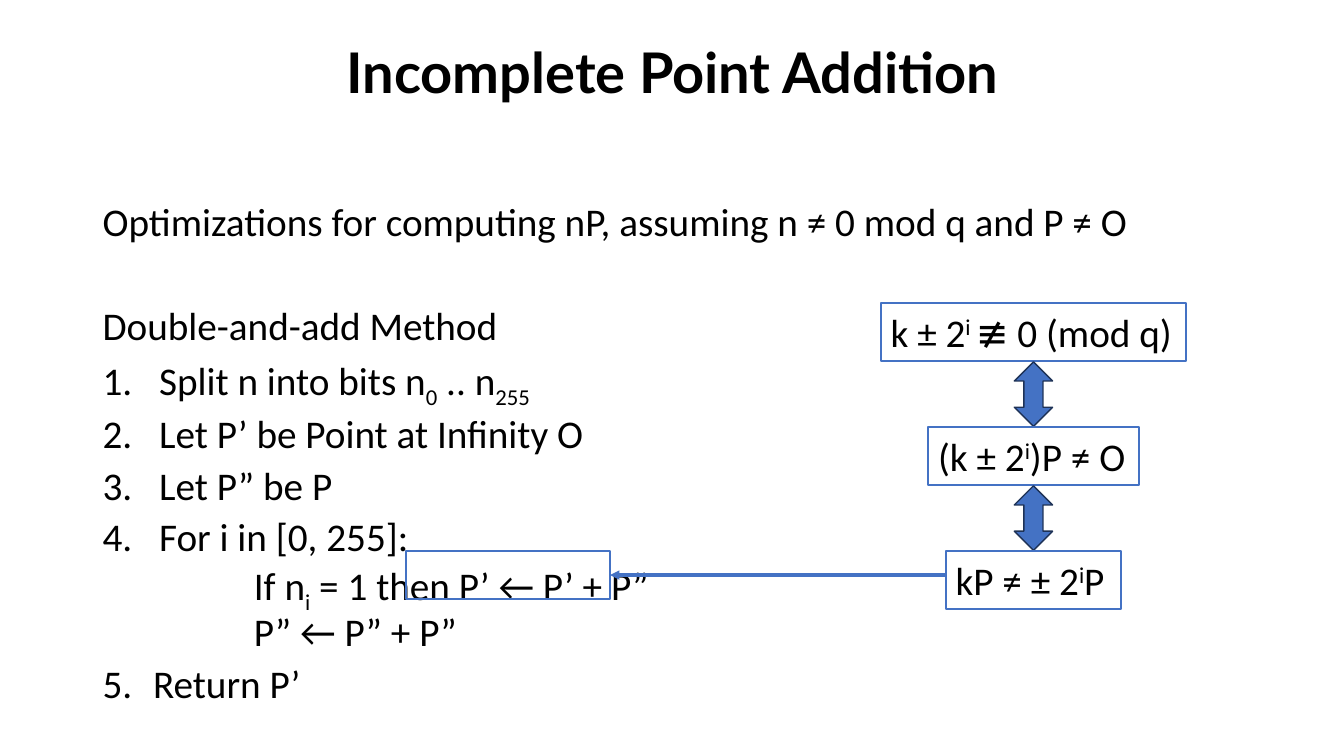
from lxml import etree
from pptx import Presentation
from pptx.dml.color import RGBColor
from pptx.enum import shapes, text
from pptx.oxml.ns import qn
from pptx.util import Inches, Pt

BLACK, WHITE, BLUE, NAVY = "000000", "FFFFFF", "4472C4", "1E3256"
SUB, SUP = -25000, 30000

TITLE = [("Incomplete Point Addition", 0)]
PLAIN = dict(margin=0, indent=0, before=10, number=None)
STEP = dict(margin=0.56, indent=-0.56, before=10, number=1)
NESTED = dict(margin=1.5, indent=0, before=5, number=None)
BODY = [
    ([("Optimizations for computing nP, assuming n ≠ 0 mod q and P ≠ O", 0)], {**PLAIN, "before": 0}),
    ([("Double-and-add Method", 0)], {**PLAIN, "before": 47}),
    ([("Split n into bits n", 0), ("0", SUB), (" .. n", 0), ("255", SUB)], STEP),
    ([("Let P’ be Point at Infinity O", 0)], STEP),
    ([("Let P” be P", 0)], STEP),
    ([("For i in [0, 255]:", 0)], STEP),
    ([("If n", 0), ("i", SUB), (" = 1 then P’ ← P’ + P”", 0)], NESTED),
    ([("P” ← P” + P”", 0)], NESTED),
    ([("Return P’", 0)], {**STEP, "margin": 0.5, "indent": -0.5, "number": 5}),
]
CONDITIONS = [
    (3.03, [("k ± 2", 0), ("i ", SUP), ("≢ 0 (mod q)", 0)]),
    (2.09, [("(k ± 2", 0), ("i", SUP), (")P ≠ O", 0)]),
    (1.74, [("kP ≠ ± 2", 0), ("i", SUP), ("P", 0)]),
]
CHAIN_X, CHAIN_TOP, PITCH, BOX_H = 10.25, 3.01, 1.23, 0.57
ARROW_W, ARROW_H = 0.38, 0.64
HIGHLIGHT = (4.03, 5.47, 2.02, 0.47)


def color(value):
    return RGBColor.from_string(value)


def write(p, runs, font="Calibri", size=28, bold=False):
    for words, base in runs:
        r = p.add_run()
        r.text = words
        for key, value in dict(name=font, size=Pt(size), bold=bold).items():
            setattr(r.font, key, value)
        r.font.color.rgb = color(BLACK)
        if base:
            r.font._element.set("baseline", str(base))


def add_text(slide, box, anchor):
    tf = slide.shapes.add_textbox(*map(Inches, box)).text_frame
    for key, value in dict(word_wrap=True, vertical_anchor=anchor).items():
        setattr(tf, key, value)
    return tf


def add_shape(slide, kind, box, fill, line, width):
    sp = slide.shapes.add_shape(kind, *map(Inches, box))
    sp.shadow.inherit = False
    if fill:
        sp.fill.solid()
        sp.fill.fore_color.rgb = color(fill)
    else:
        sp.fill.background()
    sp.line.color.rgb = color(line)
    sp.line.width = Pt(width)
    return sp


def add_body(slide):
    tf = add_text(slide, (0.92, 2, 11.5, 5.41), text.MSO_ANCHOR.TOP)
    for i, (runs, style) in enumerate(BODY):
        p = tf.add_paragraph() if i else tf.paragraphs[0]
        p.line_spacing = 0.8
        p.space_before = Pt(style["before"])
        pPr = p._p.get_or_add_pPr()
        pPr.set("marL", str(Inches(style["margin"])))
        pPr.set("indent", str(Inches(style["indent"])))
        if style["number"]:
            bullet = etree.SubElement(pPr, qn("a:buAutoNum"), type="arabicPeriod")
            if style["number"] > 1:
                bullet.set("startAt", str(style["number"]))
        write(p, runs)


def add_chain(slide):
    for i, (width, runs) in enumerate(CONDITIONS):
        top = CHAIN_TOP + i * PITCH
        sp = add_shape(slide, shapes.MSO_SHAPE.RECTANGLE,
                       (CHAIN_X - width / 2, top, width, BOX_H), WHITE, BLUE, 1.5)
        tf = sp.text_frame
        for key, value in dict(word_wrap=False, vertical_anchor=text.MSO_ANCHOR.TOP).items():
            setattr(tf, key, value)
        p = tf.paragraphs[0]
        p.alignment = text.PP_ALIGN.LEFT
        write(p, runs)
        if i < len(CONDITIONS) - 1:
            add_shape(slide, shapes.MSO_SHAPE.UP_DOWN_ARROW,
                      (CHAIN_X - ARROW_W / 2, top + BOX_H + 0.01, ARROW_W, ARROW_H), BLUE, NAVY, 1)


def add_pointer(slide):
    target = add_shape(slide, shapes.MSO_SHAPE.RECTANGLE, HIGHLIGHT, None, BLUE, 1.5)
    left, top, width, height = HIGHLIGHT
    y = top + height / 2
    start = CHAIN_X - CONDITIONS[-1][0] / 2
    line = slide.shapes.add_connector(shapes.MSO_CONNECTOR.STRAIGHT,
                                      *map(Inches, (start, y, left + width, y)))
    line.end_connect(target, 3)
    line.line.color.rgb = color(BLUE)
    line.line.width = Pt(2.25)
    etree.SubElement(line.line._get_or_add_ln(), qn("a:tailEnd"), type="triangle")
    etree.SubElement(line._element.spPr, qn("a:effectLst"))


def main():
    prs = Presentation()
    prs.slide_width, prs.slide_height = Inches(13.33), Inches(7.5)
    slide = prs.slides.add_slide(prs.slide_layouts[6])
    p = add_text(slide, (0.92, 0.02, 11.5, 1.45), text.MSO_ANCHOR.MIDDLE).paragraphs[0]
    for key, value in dict(alignment=text.PP_ALIGN.CENTER, line_spacing=0.9).items():
        setattr(p, key, value)
    write(p, TITLE, "Lato", 40, True)
    add_body(slide)
    add_pointer(slide)
    add_chain(slide)
    prs.save("out.pptx")


if __name__ == "__main__":
    main()
